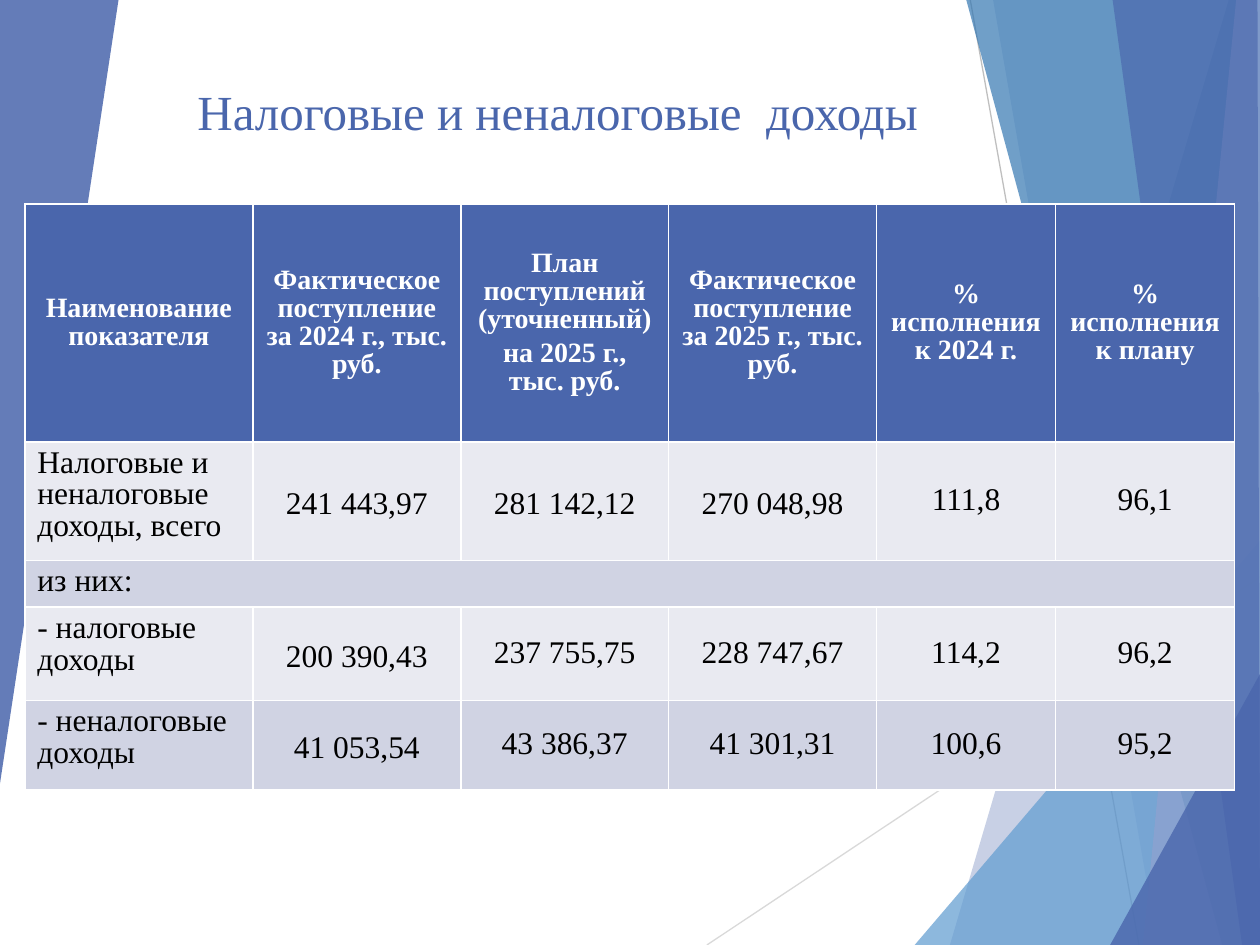
from lxml.etree import SubElement
from pptx import Presentation
from pptx.dml.color import RGBColor
from pptx.enum.shapes import MSO_CONNECTOR
from pptx.enum.text import MSO_ANCHOR, PP_ALIGN
from pptx.oxml.ns import qn
from pptx.util import Cm, Pt

FONT = "Times New Roman"
BLUE = RGBColor(0x4A, 0x66, 0xAC)
SKY = RGBColor(0x62, 0x9D, 0xD1)
TEAL = RGBColor(0x34, 0x77, 0xB2)
LAVENDER = RGBColor(0x90, 0xA2, 0xCF)
LIGHT_BAND = RGBColor(0xE9, 0xEA, 0xF1)
DARK_BAND = RGBColor(0xD0, 0xD3, 0xE3)
LIGHT_GRAY = RGBColor(0xD9, 0xD9, 0xD9)
GRAY = RGBColor(0xBF, 0xBF, 0xBF)
WHITE = RGBColor(0xFF, 0xFF, 0xFF)
BLACK = RGBColor(0, 0, 0)

WIDTH, HEIGHT = 25.4, 19.05

RAYS = [
    ((14.25, HEIGHT), (25.43, 11.61), LIGHT_GRAY),
    ((19.56, 0), (22.96, HEIGHT), GRAY),
]
FACETS = [
    ([(24.77, 0), (19.15, HEIGHT), (WIDTH, HEIGHT), (WIDTH, 0)], BLUE, 30),
    ([(20.02, 0), (23.34, HEIGHT), (WIDTH, HEIGHT), (WIDTH, 0)], BLUE, 20),
    ([(18.44, HEIGHT), (WIDTH, 10.9), (WIDTH, HEIGHT)], SKY, 72),
    ([(19.48, 0), (24.64, HEIGHT), (WIDTH, HEIGHT), (WIDTH, 0)], TEAL, 70),
    ([(24.92, 0), (23.04, HEIGHT), (WIDTH, HEIGHT), (WIDTH, 0)], LAVENDER, 70),
    ([(22.43, 0), (25.04, HEIGHT), (WIDTH, HEIGHT), (25.35, 0)], BLUE, 65),
    ([(22.38, HEIGHT), (WIDTH, 13.59), (WIDTH, HEIGHT)], BLUE, 80),
    ([(0, 0), (2.39, 0), (0, 15.8)], BLUE, 85),
]

COLUMN_WIDTHS = [4.6, 4.19, 4.19, 4.19, 3.61, 3.61]
ROW_HEIGHTS = [4.8, 2.39, 0.94, 1.88, 1.8]
ROW_FILLS = [BLUE, LIGHT_BAND, DARK_BAND, LIGHT_BAND, DARK_BAND]
ROWS = [
    [
        "Наименование показателя",
        "Фактическое поступление за 2024 г., тыс. руб.",
        "План поступлений (уточненный)\nна 2025 г., тыс. руб.",
        "Фактическое поступление за 2025 г., тыс. руб.",
        "% исполнения к 2024 г.",
        "% исполнения к плану",
    ],
    ["Налоговые и неналоговые доходы, всего",
     "241 443,97", "281 142,12", "270 048,98", "111,8", "96,1"],
    ["из них:"],
    ["- налоговые доходы",
     "200 390,43", "237 755,75", "228 747,67", "114,2", "96,2"],
    ["- неналоговые доходы",
     "41 053,54", "43 386,37", "41 301,31", "100,6", "95,2"],
]
TOTAL_ROW = 1
SPANNING_ROW = 2
LOOSE_CELLS = {(1, 1), (1, 2), (1, 3), (3, 1), (4, 1)}


def add_backdrop(slide, left, top):
    for start, end, color in RAYS:
        ray = slide.shapes.add_connector(
            MSO_CONNECTOR.STRAIGHT,
            Cm(left + start[0]), Cm(top + start[1]),
            Cm(left + end[0]), Cm(top + end[1]))
        ray.line.color.rgb = color
        ray.line.width = Pt(0.75)
        SubElement(ray._element.spPr, qn("a:effectLst"))

    for points, color, opacity in FACETS:
        corners = [(Cm(left + x), Cm(top + y)) for x, y in points]
        builder = slide.shapes.build_freeform(*corners[0])
        builder.add_line_segments(corners[1:], close=True)
        facet = builder.convert_to_shape()
        facet.shadow.inherit = False
        facet.line.fill.background()
        facet.fill.solid()
        facet.fill.fore_color.rgb = color
        color_element = facet._element.spPr.find(".//" + qn("a:srgbClr"))
        SubElement(color_element, qn("a:alpha"), val=str(opacity * 1000))


def add_title(slide, left, top, width, height):
    title = slide.shapes.add_textbox(Cm(left), Cm(top), Cm(width), Cm(height))
    title.fill.solid()
    title.fill.fore_color.rgb = WHITE
    title.text_frame.word_wrap = True
    title.text_frame.text = "Налоговые и неналоговые  доходы"
    paragraph = title.text_frame.paragraphs[0]
    paragraph.alignment = PP_ALIGN.CENTER
    paragraph.font.name = FONT
    paragraph.font.size = Pt(28)
    paragraph.font.color.rgb = BLUE


def add_borders(cell):
    properties = cell._tc.get_or_add_tcPr()
    for side in ("a:lnL", "a:lnR", "a:lnT", "a:lnB"):
        border = SubElement(properties, qn(side), w=str(Pt(1)))
        fill = SubElement(border, qn("a:solidFill"))
        SubElement(fill, qn("a:srgbClr"), val=str(WHITE))


def style_cell(cell, row, column):
    header = row == 0
    label = column == 0 and not header
    add_borders(cell)
    cell.fill.solid()
    cell.fill.fore_color.rgb = ROW_FILLS[row]
    cell.vertical_anchor = MSO_ANCHOR.TOP if label else MSO_ANCHOR.MIDDLE
    for index, paragraph in enumerate(cell.text_frame.paragraphs):
        paragraph.alignment = PP_ALIGN.LEFT if label else PP_ALIGN.CENTER
        paragraph.line_spacing = 1.15 if (row, column) in LOOSE_CELLS else 0.9
        if index:
            paragraph.space_before = Pt(3.2)
        paragraph.font.name = FONT
        paragraph.font.size = Pt(16 if header else 18)
        paragraph.font.bold = header
        paragraph.font.color.rgb = WHITE if header else BLACK


def add_income_table(slide, left, top):
    table = slide.shapes.add_table(
        len(ROW_HEIGHTS), len(COLUMN_WIDTHS), Cm(left), Cm(top),
        Cm(sum(COLUMN_WIDTHS)), Cm(sum(ROW_HEIGHTS))).table
    for column, width in zip(table.columns, COLUMN_WIDTHS):
        column.width = Cm(width)
    for row, height in zip(table.rows, ROW_HEIGHTS):
        row.height = Cm(height)
    for row, texts in enumerate(ROWS):
        for column, text in enumerate(texts):
            table.cell(row, column).text = text
        for column in range(len(COLUMN_WIDTHS)):
            style_cell(table.cell(row, column), row, column)
    table.cell(SPANNING_ROW, 0).merge(
        table.cell(SPANNING_ROW, len(COLUMN_WIDTHS) - 1))


def main():
    presentation = Presentation()
    presentation.slide_width = Cm(WIDTH)
    presentation.slide_height = Cm(HEIGHT)
    slide = presentation.slides.add_slide(presentation.slide_layouts[6])
    add_backdrop(slide, 0, 0)
    add_title(slide, 3.1, 1.52, 16.28, 1.47)
    add_income_table(slide, 0.5, 4.11)
    presentation.save("out.pptx")


if __name__ == "__main__":
    main()
